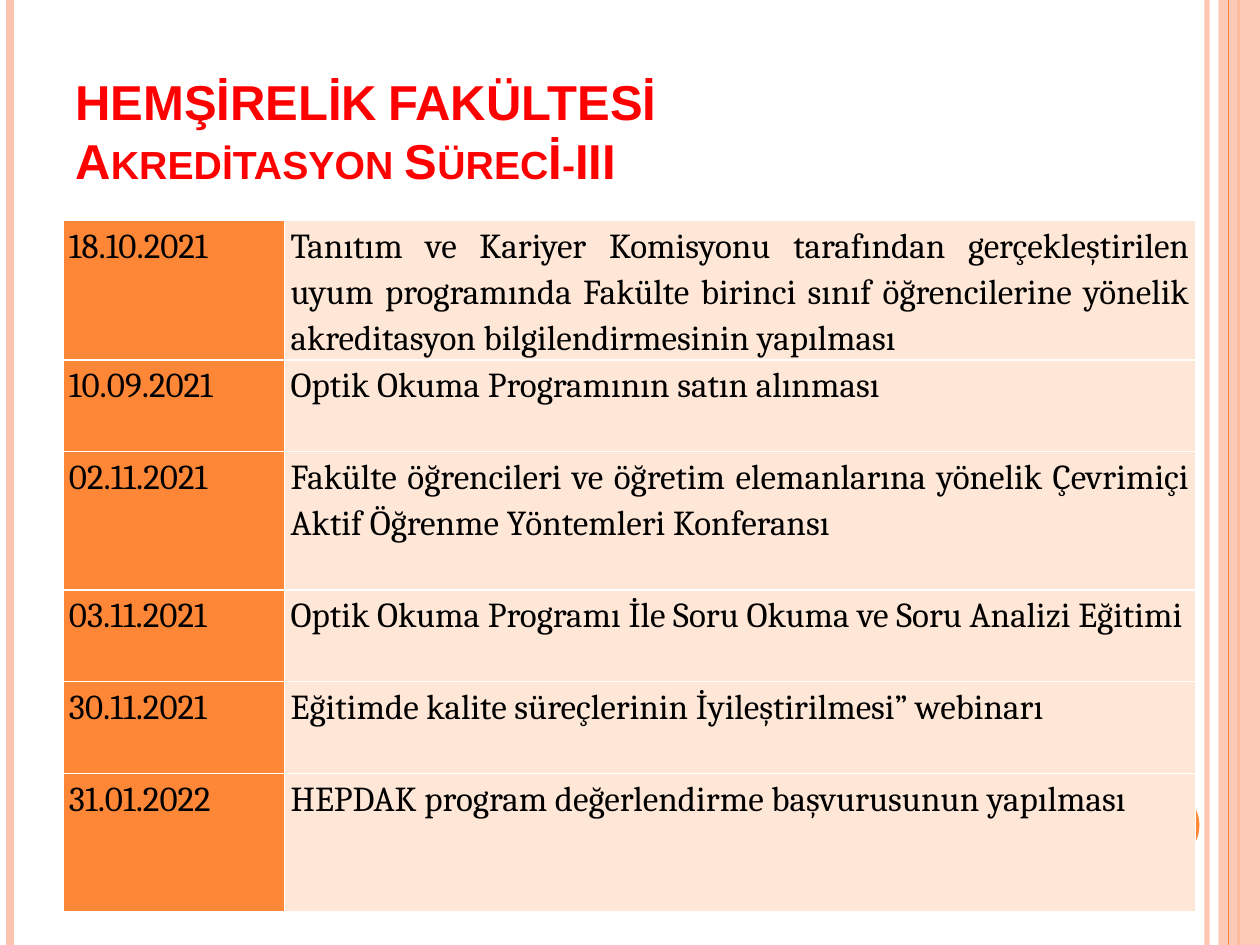
from lxml.etree import SubElement
from pptx import Presentation
from pptx.dml.color import RGBColor
from pptx.enum.lang import MSO_LANGUAGE_ID as Lang
from pptx.enum.shapes import MSO_CONNECTOR as Link, MSO_SHAPE as Form
from pptx.enum.text import MSO_ANCHOR as Anchor, MSO_AUTO_SIZE as Fit, PP_ALIGN as Align
from pptx.oxml import parse_xml
from pptx.oxml.ns import nsdecls, qn
from pptx.util import Cm, Pt

RED = RGBColor(0xFF, 0x00, 0x00)
BLACK = RGBColor(0x00, 0x00, 0x00)
ORANGE = RGBColor(0xFE, 0x86, 0x37)
PINK = RGBColor(0xFE, 0xC3, 0xAE)
CREAM = RGBColor(0xFF, 0xE7, 0xD7)
WHITE = RGBColor(0xFF, 0xFF, 0xFF)

WIDE, HIGH = Cm(25.4), Cm(19.05)
HEAD = dict(name="Arial", size=Pt(28), bold=True, language_id=Lang.TURKISH)
BODY = dict(name="Cambria", size=Pt(20), bold=False, language_id=Lang.TURKISH)
PARA = dict(alignment=Align.JUSTIFY, line_spacing=1.15, space_after=Pt(10))
CELL = dict(margin_left=Cm(0.12), margin_right=Cm(0.12), margin_top=0,
            margin_bottom=0, vertical_anchor=Anchor.TOP)

TITLE = ("HEMŞİRELİK FAKÜLTESİ", "Akreditasyon Sürecİ-III")
LOW, TALL = Cm(1.85), Cm(2.79)
STEPS = (
    ("18.10.2021", "Tanıtım ve Kariyer Komisyonu tarafından gerçekleştirilen uyum "
     "programında Fakülte birinci sınıf öğrencilerine yönelik akreditasyon "
     "bilgilendirmesinin yapılması", TALL),
    ("10.09.2021", "Optik Okuma Programının satın alınması", LOW),
    ("02.11.2021", "Fakülte öğrencileri ve öğretim elemanlarına yönelik Çevrimiçi "
     "Aktif Öğrenme Yöntemleri Konferansı", TALL),
    ("03.11.2021", "Optik Okuma Programı İle Soru Okuma ve Soru Analizi Eğitimi", LOW),
    ("30.11.2021", "Eğitimde kalite süreçlerinin İyileştirilmesi” webinarı", LOW),
    ("31.01.2022", "HEPDAK program değerlendirme başvurusunun yapılması", TALL),
)


def style(item, form):
    for key, val in form.items():
        setattr(item, key, val)


def write(para, text, form, color):
    run = para.add_run()
    run.text = text
    style(run.font, form)
    run.font.color.rgb = color
    return run


def fade(fill, share):
    """Set the opacity of a solid fill in percent."""
    tint = fill.find(".//" + qn("a:srgbClr"))
    SubElement(tint, qn("a:alpha"), val=str(share * 1000))


def stripe(slide, left, color, width, share=100):
    line = slide.shapes.add_connector(Link.STRAIGHT, left, 0, left, HIGH)
    line.line.color.rgb = color
    line.line.width = Pt(width)
    props = line._element.spPr
    if share < 100:
        fade(props, share)
    SubElement(props, qn("a:effectLst"))


def block(slide, form, box, color, share=100):
    shape = slide.shapes.add_shape(form, *box)
    shape.shadow.inherit = False
    shape.fill.solid()
    shape.fill.fore_color.rgb = color
    shape.line.fill.background()
    if share < 100:
        fade(shape._element.spPr, share)


def border(cell, color, width):
    props = cell._tc.get_or_add_tcPr()
    for spot, side in enumerate("LRTB"):
        props.insert(spot, parse_xml(
            f'<a:ln{side} {nsdecls("a")} w="{Pt(width)}"><a:solidFill>'
            f'<a:srgbClr val="{color}"/></a:solidFill></a:ln{side}>'))


def fill_cell(cell, text, color):
    style(cell, CELL)
    cell.fill.solid()
    cell.fill.fore_color.rgb = color
    border(cell, WHITE, 1)
    para = cell.text_frame.paragraphs[0]
    style(para, PARA)
    write(para, text, BODY, BLACK)


def add_title(slide):
    title = slide.shapes.title
    style(title, dict(left=Cm(1.27), top=Cm(0.76), width=Cm(20.75), height=Cm(3.18)))
    frame = title.text_frame
    style(frame, dict(vertical_anchor=Anchor.BOTTOM, word_wrap=True, auto_size=Fit.NONE))
    para = frame.paragraphs[0]
    para.alignment = Align.LEFT
    for num, text in enumerate(TITLE):
        if num:
            para.add_line_break()
        run = write(para, text, HEAD, RED)
        run.font._element.set("cap", "small")


def add_steps(slide):
    wides = (Cm(4.47), Cm(18.36))
    table = slide.shapes.add_table(len(STEPS), 2, Cm(1.27), Cm(4.45), sum(wides),
                                   sum(step[2] for step in STEPS)).table
    style(table, dict(first_row=False, horz_banding=False))
    for col, wide in zip(table.columns, wides):
        col.width = wide
    for row, (date, event, high) in zip(table.rows, STEPS):
        row.height = high
        for cell, text, color in zip(row.cells, (date, event), (ORANGE, CREAM)):
            fill_cell(cell, text, color)


def main():
    deck = Presentation()
    style(deck, dict(slide_width=WIDE, slide_height=HIGH))
    slide = deck.slides.add_slide(deck.slide_layouts[5])

    # Side bands and page dot
    stripe(slide, Cm(24.33), PINK, 3, 93)
    stripe(slide, Cm(0.2), PINK, 4.5)
    stripe(slide, Cm(24.97), ORANGE, 1.5)
    block(slide, Form.RECTANGLE, (Cm(24.56), 0, Cm(0.84), HIGH), PINK, 87)
    stripe(slide, Cm(24.77), ORANGE, 0.75)
    block(slide, Form.OVAL, (Cm(22.66), Cm(15.88), Cm(1.52), Cm(1.52)), ORANGE)

    # Heading and timeline
    add_title(slide)
    add_steps(slide)
    deck.save("out.pptx")


if __name__ == "__main__":
    main()
